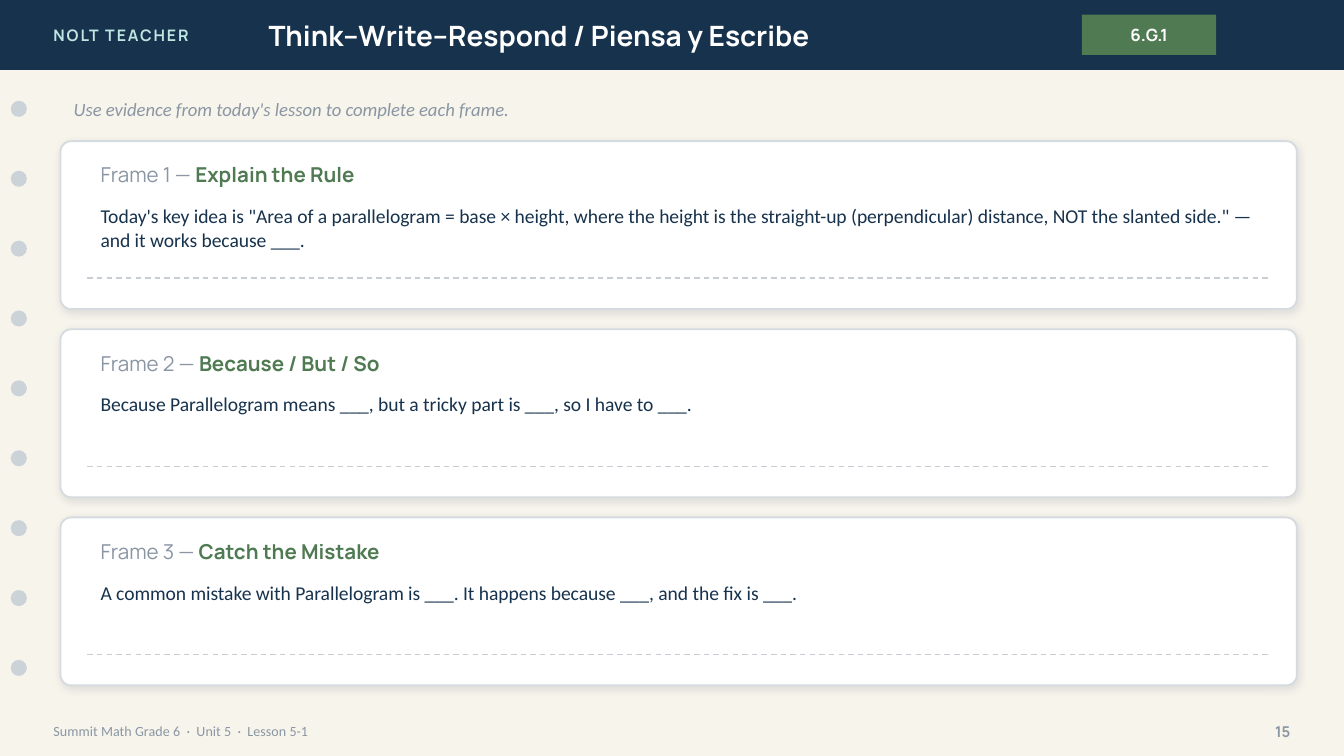
from lxml import etree
from pptx import Presentation
from pptx.dml.color import RGBColor
from pptx.enum.dml import MSO_LINE
from pptx.enum.shapes import MSO_CONNECTOR, MSO_SHAPE
from pptx.enum.text import MSO_ANCHOR as Anchor, PP_ALIGN as Align
from pptx.oxml import parse_xml
from pptx.oxml.ns import nsdecls, qn
from pptx.util import Inches, Pt

CREAM = RGBColor(0xF7, 0xF4, 0xEC)
NAVY = RGBColor(0x17, 0x32, 0x4D)
MINT = RGBColor(0xBF, 0xE6, 0xE2)
GREEN = RGBColor(0x4F, 0x7A, 0x52)
WHITE = RGBColor(0xFF, 0xFF, 0xFF)
HOLE = RGBColor(0xCB, 0xD3, 0xD9)
MUTED = RGBColor(0x8A, 0x96, 0xA3)
BORDER = RGBColor(0xD6, 0xDB, 0xDF)
RULE = RGBColor(0xC7, 0xCD, 0xD2)

HEADING, BODY = "Manrope", "Calibri"
PAGE_WIDTH = 10
PAGE_HEIGHT = PAGE_WIDTH * 9 / 16

FRAMES = [
    ("Explain the Rule",
     "Today's key idea is \"Area of a parallelogram = base × height, where the height is "
     "the straight-up (perpendicular) distance, NOT the slanted side.\" — and it works "
     "because ___."),
    ("Because / But / So",
     "Because Parallelogram means ___, but a tricky part is ___, so I have to ___."),
    ("Catch the Mistake",
     "A common mistake with Parallelogram is ___. It happens because ___, and the fix is ___."),
]


def add_run(para, text, size, color, font=BODY, bold=False, italic=False):
    span = para.add_run()
    span.text = text
    span.font.size = Pt(size)
    span.font.name = font
    span.font.bold = bold
    span.font.italic = italic
    span.font.color.rgb = color
    return span


def add_text(page, left, top, width, height, anchor=Anchor.MIDDLE, align=Align.LEFT):
    """Add an empty wrapping text box and return its first paragraph."""
    box = page.shapes.add_textbox(Inches(left), Inches(top), Inches(width), Inches(height))
    frame = box.text_frame
    frame.word_wrap = True
    frame.vertical_anchor = anchor
    para = frame.paragraphs[0]
    para.alignment = align
    return para


def add_filled(page, kind, left, top, width, height, color):
    shape = page.shapes.add_shape(
        kind, Inches(left), Inches(top), Inches(width), Inches(height))
    shape.shadow.inherit = False
    shape.fill.solid()
    shape.fill.fore_color.rgb = color
    shape.line.fill.background()
    return shape


def add_soft_shadow(shape):
    effects = shape._element.spPr.find(qn("a:effectLst"))
    effects.append(parse_xml(
        f'<a:outerShdw {nsdecls("a")} blurRad="{Pt(4)}" dist="{Pt(1)}" dir="5400000" '
        'algn="bl" rotWithShape="0"><a:srgbClr val="1C2E42"><a:alpha val="10000"/>'
        '</a:srgbClr></a:outerShdw>'))


def add_dashed_rule(page, left, top, width):
    rule = page.shapes.add_connector(
        MSO_CONNECTOR.STRAIGHT, Inches(left), Inches(top), Inches(left + width), Inches(top))
    rule.line.color.rgb = RULE
    rule.line.width = Pt(0.75)
    rule.line.dash_style = MSO_LINE.DASH
    etree.SubElement(rule._element.spPr, qn("a:effectLst"))


def add_header(page, left, top, width, height):
    add_filled(page, MSO_SHAPE.RECTANGLE, left, top, width, height, NAVY)
    para = add_text(page, left + 0.3, top, 2.4, height)
    span = add_run(para, "NOLT TEACHER", 8.5, MINT, HEADING, bold=True)
    span.font._element.set("spc", "100")
    para = add_text(page, left + 1.9, top, 5.6, height)
    add_run(para, "Think–Write–Respond / Piensa y Escribe", 15, WHITE, HEADING, bold=True)
    badge = add_filled(page, MSO_SHAPE.RECTANGLE, left + 8.05, top + 0.11, 1, 0.3, GREEN)
    badge.text_frame.vertical_anchor = Anchor.MIDDLE
    para = badge.text_frame.paragraphs[0]
    para.alignment = Align.CENTER
    add_run(para, "6.G.1", 9, WHITE, HEADING, bold=True)


def add_binder_holes(page, left, top, count=9, size=0.12, pitch=0.52):
    for index in range(count):
        add_filled(page, MSO_SHAPE.OVAL, left, top + index * pitch, size, size, HOLE)


def add_footer(page, left, top, width, height):
    para = add_text(page, left, top, 7, height)
    add_run(para, "Summit Math Grade 6  ·  Unit 5  ·  Lesson 5-1", 7.5, MUTED)
    para = add_text(page, left + width - 0.5, top, 0.5, height, align=Align.RIGHT)
    add_run(para, "15", 8, MUTED, HEADING, bold=True)


def add_frame_card(page, left, top, width, height, number, title, prompt):
    card = add_filled(page, MSO_SHAPE.ROUNDED_RECTANGLE, left, top, width, height, WHITE)
    card.adjustments[0] = 0.08 / height
    card.line.color.rgb = BORDER
    card.line.width = Pt(1)
    add_soft_shadow(card)

    inner_left, inner_width = left + 0.2, width - 0.4
    para = add_text(page, inner_left, top + 0.1, inner_width, 0.3)
    add_run(para, f"Frame {number} — ", 11, MUTED, HEADING)
    add_run(para, title, 11, GREEN, HEADING, bold=True)
    para = add_text(page, inner_left, top + 0.42, inner_width, 0.4, anchor=Anchor.TOP)
    add_run(para, prompt, 10.5, NAVY)
    add_dashed_rule(page, inner_left, top + 1.02, inner_width)


def add_frames(page, left, top, width, card_height=1.25, gap=0.15):
    para = add_text(page, left, top, width, 0.3)
    add_run(para, "Use evidence from today's lesson to complete each frame.", 10, MUTED,
            italic=True)
    for index, (title, prompt) in enumerate(FRAMES):
        card_top = top + 0.39 + index * (card_height + gap)
        add_frame_card(page, left, card_top, width, card_height, index + 1, title, prompt)


def main():
    deck = Presentation()
    deck.slide_width, deck.slide_height = Inches(PAGE_WIDTH), Inches(PAGE_HEIGHT)
    page = deck.slides.add_slide(deck.slide_layouts[6])
    page.background.fill.solid()
    page.background.fill.fore_color.rgb = CREAM
    add_header(page, 0, 0, PAGE_WIDTH, 0.52)
    add_binder_holes(page, 0.08, 0.75)
    add_footer(page, 0.3, 5.3, 9.4, 0.28)
    add_frames(page, 0.45, 0.66, 9.2)
    deck.save("out.pptx")


if __name__ == "__main__":
    main()
